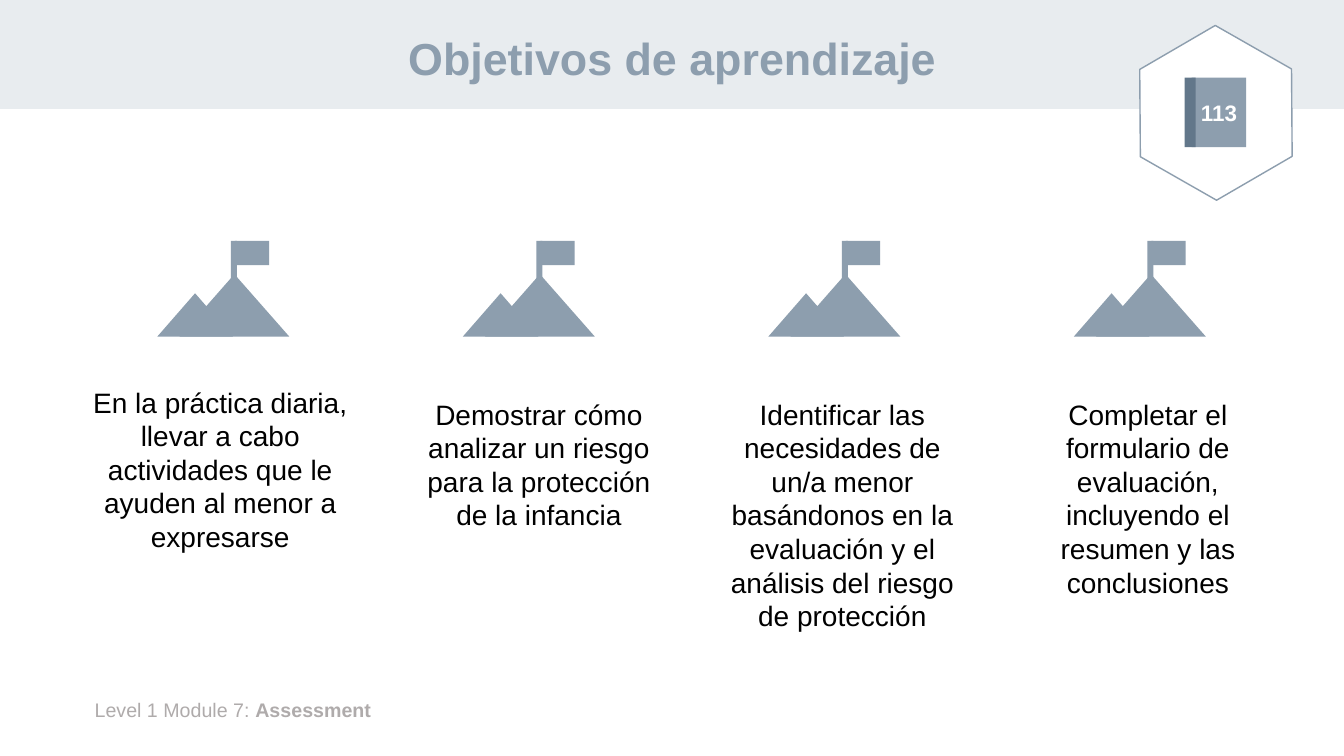
from dataclasses import dataclass
from pptx import Presentation
from pptx.dml.color import RGBColor
from pptx.enum.shapes import MSO_SHAPE
from pptx.enum.text import MSO_ANCHOR, PP_ALIGN
from pptx.util import Inches, Pt


@dataclass(frozen=True)
class Theme:
    font: str = "Arial"
    band: str = "E8ECEF"
    slate: str = "8D9EAE"
    dark: str = "62778A"
    grey: str = "AFABAB"
    white: str = "FFFFFF"
    black: str = "000000"
    title: int = 32
    body: int = 20
    badge: int = 16
    foot: int = 14


THEME = Theme()

# Text box left, top, width, height, and wording
GOALS = [
    (0.81, 3.77, 2.75, 1.78, "En la práctica diaria, llevar a cabo actividades "
     "que le ayuden al menor a expresarse"),
    (3.97, 3.89, 2.75, 1.45, "Demostrar cómo analizar un riesgo para la "
     "protección de la infancia"),
    (6.98, 3.89, 2.75, 2.46, "Identificar las necesidades de un/a menor "
     "basándonos en la evaluación y el análisis del riesgo de protección"),
    (10.09, 3.89, 2.59, 2.12, "Completar el formulario de evaluación, "
     "incluyendo el resumen y las conclusiones"),
]


def add_block(shapes, kind, x, y, w, h, fill, line=None):
    block = shapes.add_shape(kind, Inches(x), Inches(y), Inches(w), Inches(h))
    block.shadow.inherit = False
    block.fill.solid()
    block.fill.fore_color.rgb = RGBColor.from_string(fill)
    if line:
        block.line.color.rgb = RGBColor.from_string(line)
        block.line.width = Pt(1)
    else:
        block.line.fill.background()
    return block


def style(para, size, color, bold=None, align=PP_ALIGN.CENTER):
    para.alignment = align
    para.font.name = THEME.font
    para.font.size = Pt(size)
    para.font.bold = bold
    para.font.color.rgb = RGBColor.from_string(color)


def add_text(slide, x, y, w, h, words, size, color, **look):
    box = slide.shapes.add_textbox(Inches(x), Inches(y), Inches(w), Inches(h))
    box.text_frame.word_wrap = True
    para = box.text_frame.paragraphs[0]
    para.add_run().text = words
    style(para, size, color, **look)
    return box.text_frame


def add_header(slide, x, y, w, h):
    add_block(slide.shapes, MSO_SHAPE.RECTANGLE, x, y, w, h, THEME.band)
    frame = add_text(slide, x + 0.92, y + 0.13, 11.5, h - 0.13,
                     "Objetivos de aprendizaje", THEME.title, THEME.slate, bold=True)
    frame.vertical_anchor = MSO_ANCHOR.MIDDLE
    frame.paragraphs[0].line_spacing = 0.9


def add_footer(slide, x, y, w, h):
    frame = add_text(slide, x, y, w, h, "Level 1 Module 7: ", THEME.foot,
                     THEME.grey, align=PP_ALIGN.LEFT)
    run = frame.paragraphs[0].add_run()
    run.text = "Assessment"
    run.font.bold = True


def add_peak(slide, x, y):
    """Two mountains with a flag on the taller one."""
    parts = slide.shapes.add_group_shape().shapes
    for kind, left, top, w, h in [
        (MSO_SHAPE.RECTANGLE, 0.73, 0, 0.06, 0.4),
        (MSO_SHAPE.RECTANGLE, 0.77, 0, 0.34, 0.24),
        (MSO_SHAPE.ISOSCELES_TRIANGLE, 0.22, 0.33, 1.09, 0.62),
        (MSO_SHAPE.ISOSCELES_TRIANGLE, 0, 0.52, 0.75, 0.43),
    ]:
        add_block(parts, kind, x + left, y + top, w, h, THEME.slate)


def add_goals(slide, x, y, step):
    for i, (left, top, w, h, words) in enumerate(GOALS):
        add_peak(slide, x + i * step, y)
        add_text(slide, left, top, w, h, words, THEME.body, THEME.black)


def add_badge(slide, x, y, w, h):
    parts = slide.shapes.add_group_shape().shapes
    # Hexagon frame
    frame = add_block(parts, MSO_SHAPE.HEXAGON, x, y, w, h, THEME.white, THEME.slate)
    frame.adjustments[0] = 0.29
    frame.rotation = 29.7
    # Book with page number
    cover = add_block(parts, MSO_SHAPE.RECTANGLE, x + 0.63, y + 0.4, 0.54, 0.69, THEME.slate)
    cover.text_frame.word_wrap = False
    cover.text_frame.vertical_anchor = MSO_ANCHOR.MIDDLE
    para = cover.text_frame.paragraphs[0]
    para.add_run().text = "113"
    style(para, THEME.badge, THEME.white, bold=True)
    add_block(parts, MSO_SHAPE.RECTANGLE, x + 0.56, y + 0.4, 0.11, 0.69, THEME.dark)


def main():
    deck = Presentation()
    deck.slide_width, deck.slide_height = Inches(13.33), Inches(7.5)
    slide = deck.slides.add_slide(deck.slide_layouts[6])
    add_header(slide, 0, 0, 13.33, 1.08)
    add_footer(slide, 0.84, 6.87, 11.35, 0.34)
    add_goals(slide, 1.56, 2.39, 3.03)
    add_badge(slide, 11.19, 0.37, 1.74, 1.5)
    deck.save("out.pptx")


if __name__ == "__main__":
    main()
